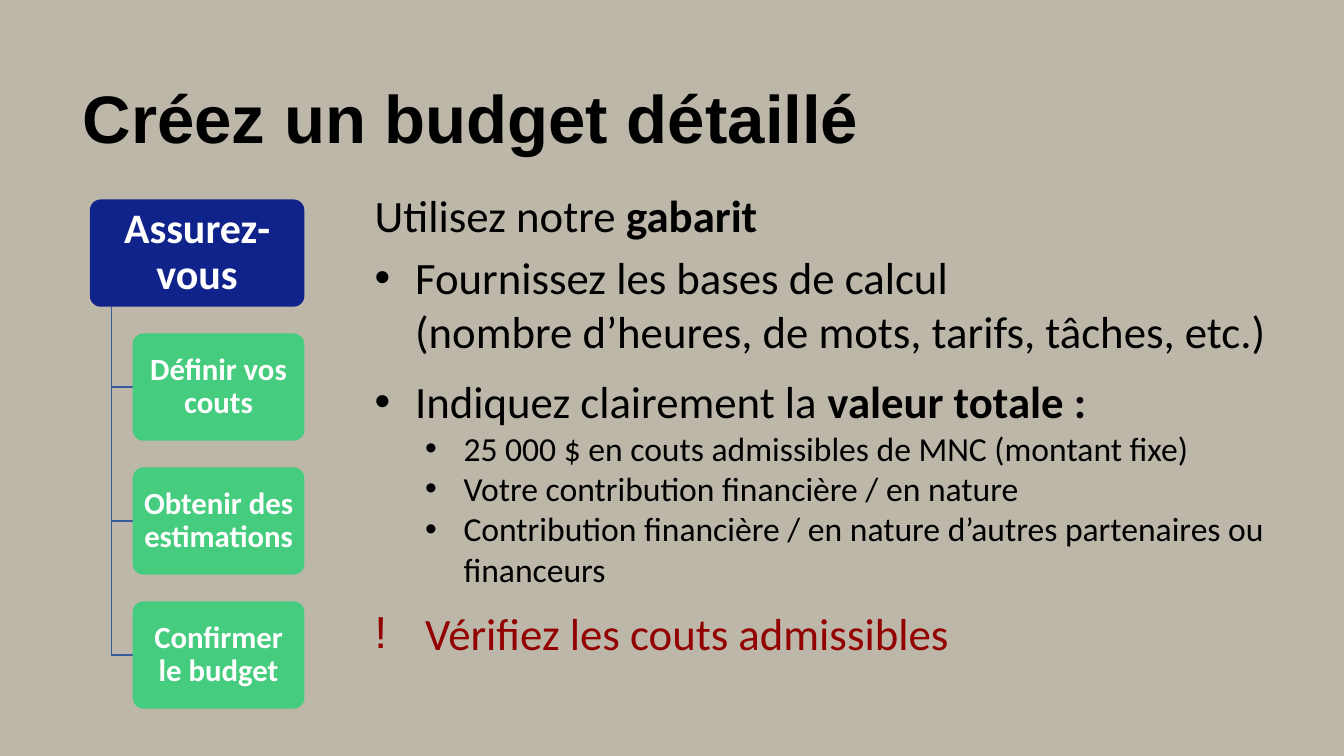
import pptx
import pptx.util
import pptx.dml.color
import pptx.enum.shapes
import pptx.enum.text
import pptx.oxml.ns
from dataclasses import dataclass
from lxml import etree

Pt = pptx.util.Pt


@dataclass(frozen=True)
class Theme:
    background: str = "BDB7AA"
    ink: str = "000000"
    light: str = "FFFFFF"
    lead: str = "10238B"
    step: str = "46CC7E"
    branch: str = "365B9D"
    warning: str = "920000"
    heading_font: str = "Arial"
    body_font: str = "Calibri"
    title_size: float = 48
    body_size: float = 32
    lead_size: float = 30
    detail_size: float = 24
    step_size: float = 22


class SlideBuilder:
    def __init__(self, slide, theme):
        self.slide = slide
        self.theme = theme
        self.paint(slide.background.fill, theme.background)

    def paint(self, fill, color):
        fill.solid()
        fill.fore_color.rgb = pptx.dml.color.RGBColor.from_string(color)

    def style(self, paragraph, size, color, bold=None, font=None):
        paragraph.font.name = font or self.theme.body_font
        paragraph.font.size = Pt(size)
        paragraph.font.bold = bold
        self.paint(paragraph.font.fill, color)

    def margins(self, frame, horizontal, vertical):
        frame.word_wrap = True
        frame.margin_left = frame.margin_right = Pt(horizontal)
        frame.margin_top = frame.margin_bottom = Pt(vertical)

    def text_area(self, left, top, width, height, horizontal=7.2, vertical=3.6):
        area = self.slide.shapes.add_textbox(Pt(left), Pt(top), Pt(width), Pt(height))
        self.margins(area.text_frame, horizontal, vertical)
        return area.text_frame

    def title(self, text, left, top, width, height):
        heading = self.text_area(left, top, width, height, 0, 0).paragraphs[0]
        heading.text = text
        heading.line_spacing = Pt(60)
        self.style(heading, self.theme.title_size, self.theme.ink, True, self.theme.heading_font)

    def card(self, text, left, top, width, height, color, size):
        card = self.slide.shapes.add_shape(
            pptx.enum.shapes.MSO_SHAPE.ROUNDED_RECTANGLE,
            Pt(left), Pt(top), Pt(width), Pt(height))
        card.adjustments[0] = 0.1
        card.shadow.inherit = False
        card.line.fill.background()
        self.paint(card.fill, color)
        frame = card.text_frame
        self.margins(frame, 5.5, 4.5)
        frame.vertical_anchor = pptx.enum.text.MSO_ANCHOR.MIDDLE
        label = frame.paragraphs[0]
        label.text = text
        label.alignment = pptx.enum.text.PP_ALIGN.CENTER
        label.line_spacing = 0.9
        self.style(label, size, self.theme.light, True)

    def branch(self, left, top, right, bottom):
        outline = self.slide.shapes.build_freeform(Pt(left), Pt(top))
        outline.add_line_segments([(Pt(left), Pt(bottom)), (Pt(right), Pt(bottom))], close=False)
        branch = outline.convert_to_shape()
        branch.shadow.inherit = False
        branch.fill.background()
        self.paint(branch.line.fill, self.theme.branch)
        branch.line.width = Pt(1)

    def bullet(self, paragraph, mark, indent, hanging):
        properties = paragraph._p.get_or_add_pPr()
        properties.set("marL", str(Pt(indent)))
        properties.set("indent", str(-Pt(hanging)))
        qn = pptx.oxml.ns.qn
        etree.SubElement(properties, qn("a:buFont"), typeface=self.theme.heading_font)
        etree.SubElement(properties, qn("a:buChar"), char=mark)

    def item(self, paragraph, text, strong="", mark=None, indent=0, hanging=0,
             level=0, after=0, size=None, color=None):
        paragraph.level = level
        if mark:
            self.bullet(paragraph, mark, indent, hanging)
        paragraph.space_after = Pt(after)
        self.style(paragraph, size or self.theme.body_size, color or self.theme.ink)
        for position, line in enumerate(text.split("\n")):
            if position:
                paragraph.add_line_break()
            paragraph.add_run().text = line
        if strong:
            emphasis = paragraph.add_run()
            emphasis.text = strong
            emphasis.font.bold = True


def main():
    theme = Theme()
    presentation = pptx.Presentation()
    presentation.slide_width, presentation.slide_height = Pt(960), Pt(540)
    builder = SlideBuilder(presentation.slides.add_slide(presentation.slide_layouts[6]), theme)

    builder.title("Créez un budget détaillé", 59, 52, 590, 55)

    lead_left, lead_top, lead_width, card_height = 64.2, 142.5, 153.2, 76.6
    step_pitch = 95.7
    trunk_left = lead_left + lead_width * 0.1
    step_left = lead_left + lead_width * 0.2
    steps = ["Définir vos couts", "Obtenir des estimations", "Confirmer le budget"]
    for order, step in enumerate(steps, 1):
        step_top = lead_top + order * step_pitch
        builder.branch(trunk_left, lead_top + card_height, step_left, step_top + card_height / 2)
        builder.card(step, step_left, step_top, lead_width * 0.8, card_height,
                     theme.step, theme.step_size)
    builder.card("Assurez-vous", lead_left, lead_top, lead_width, card_height,
                 theme.lead, theme.lead_size)

    main_point = dict(mark="•", indent=28.8, hanging=28.8)
    detail = dict(mark="•", indent=63.4, hanging=27.4, level=1, size=theme.detail_size)
    advice = [
        dict(text="Utilisez notre ", strong="gabarit", after=6),
        dict(text="Fournissez les bases de calcul\n(nombre d’heures, de mots, tarifs, tâches, etc.)",
             after=12, **main_point),
        dict(text="Indiquez clairement la ", strong="valeur totale :", **main_point),
        dict(text="25 000 $ en couts admissibles de MNC (montant fixe)", **detail),
        dict(text="Votre contribution financière / en nature", **detail),
        dict(text="Contribution financière / en nature d’autres partenaires ou financeurs",
             after=12, **detail),
        dict(text="Vérifiez les couts admissibles", mark="!", indent=36, hanging=36,
             color=theme.warning),
    ]
    frame = builder.text_area(260.6, 130.3, 656.6, 347.8)
    for order, entry in enumerate(advice):
        paragraph = frame.add_paragraph() if order else frame.paragraphs[0]
        builder.item(paragraph, **entry)

    presentation.save("out.pptx")


if __name__ == "__main__":
    main()
